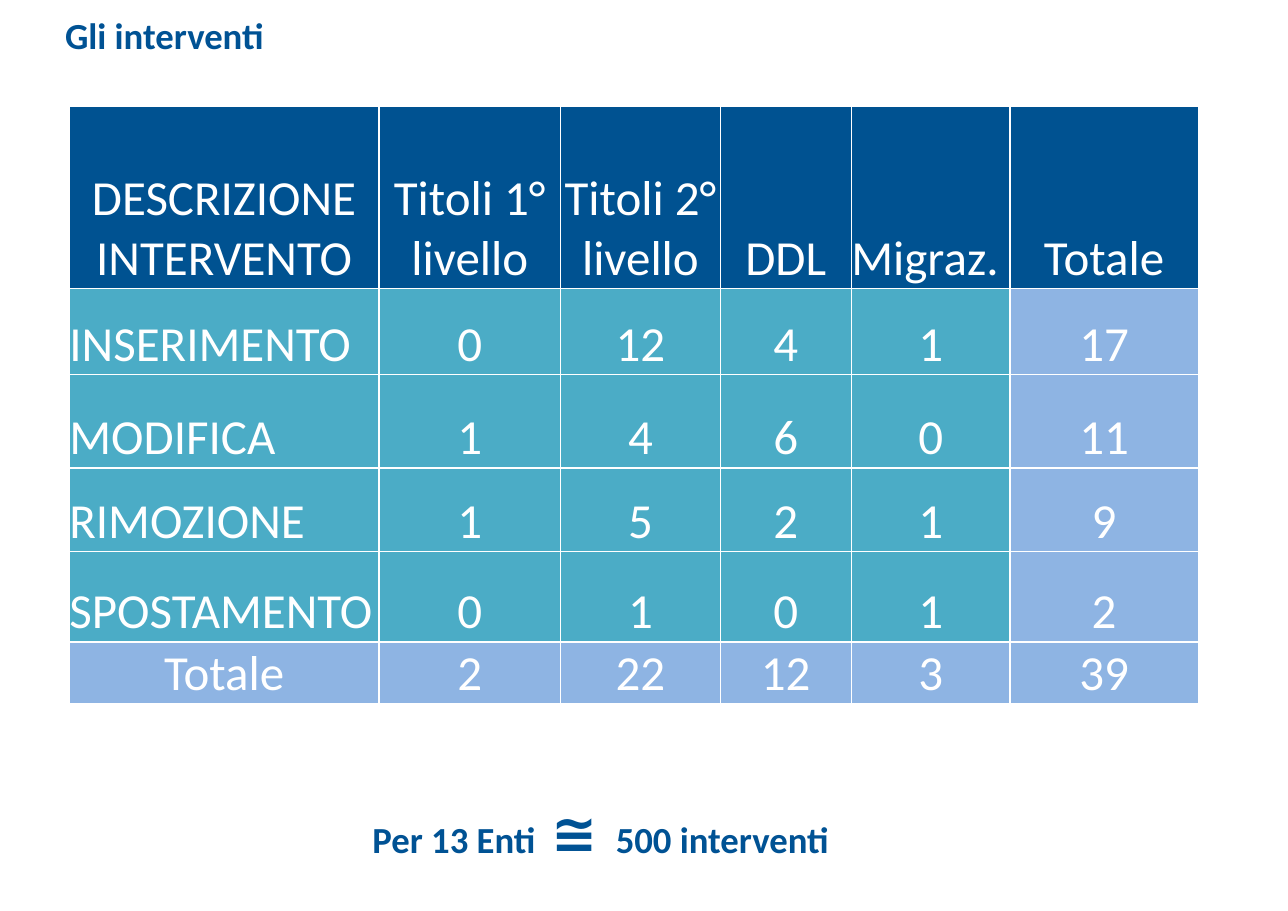
from lxml.etree import SubElement
from pptx import Presentation
from pptx.dml.color import RGBColor
from pptx.enum.text import MSO_ANCHOR, MSO_AUTO_SIZE, PP_ALIGN
from pptx.oxml.ns import qn
from pptx.util import Cm, Pt

BLUE = RGBColor(0x00, 0x52, 0x94)
HEADER = RGBColor(0x00, 0x52, 0x91)
TEAL = RGBColor(0x4B, 0xAC, 0xC6)
LIGHT = RGBColor(0x8E, 0xB4, 0xE3)
WHITE = RGBColor(0xFF, 0xFF, 0xFF)

ROWS = [
    ["DESCRIZIONE INTERVENTO", "Titoli 1° livello", "Titoli 2° livello", "DDL", "Migraz. ", "Totale"],
    ["INSERIMENTO", "0", "12", "4", "1", "17"],
    ["MODIFICA", "1", "4", "6", "0", "11"],
    ["RIMOZIONE", "1", "5", "2", "1", "9"],
    ["SPOSTAMENTO", "0", "1", "0", "1", "2"],
    ["Totale", "2", "22", "12", "3", "39"],
]
WIDTHS = [7.14, 4.19, 3.68, 3.02, 3.66, 4.34]
HEIGHTS = [4.19, 1.98, 2.16, 1.93, 2.08, 1.42]


def set_frame(tf):
    tf.word_wrap = True
    tf.auto_size = MSO_AUTO_SIZE.NONE
    tf.vertical_anchor = MSO_ANCHOR.TOP
    tf.margin_left, tf.margin_top = Cm(1.5), Cm(0.3)
    tf.margin_right, tf.margin_bottom = Cm(0.6), Cm(0.38)
    p = tf.paragraphs[0]
    p.alignment = PP_ALIGN.LEFT
    p.font.name = "Calibri"
    p.font.size = Pt(24)
    p.font.bold = True
    p.font.color.rgb = BLUE
    return p


def set_borders(cell):
    tcPr = cell._tc.get_or_add_tcPr()
    for side in ("a:lnL", "a:lnR", "a:lnT", "a:lnB"):
        ln = SubElement(tcPr, qn(side), w=str(Pt(1)))
        fill = SubElement(ln, qn("a:solidFill"))
        SubElement(fill, qn("a:srgbClr"), val=str(WHITE))


prs = Presentation()
prs.slide_width, prs.slide_height = Cm(29.7), Cm(21)
s = prs.slides.add_slide(prs.slide_layouts[5])

title = s.shapes.title
title.left, title.top, title.width, title.height = Cm(0), Cm(0), Cm(29.7), Cm(1.73)
title.text_frame.text = "Gli interventi"
set_frame(title.text_frame)

table = s.shapes.add_table(len(ROWS), len(WIDTHS), Cm(1.6), Cm(2.46),
                           Cm(sum(WIDTHS)), Cm(sum(HEIGHTS))).table
for column, width in zip(table.columns, WIDTHS):
    column.width = Cm(width)
for row, height in zip(table.rows, HEIGHTS):
    row.height = Cm(height)

last_row, last_col = len(ROWS) - 1, len(WIDTHS) - 1
for i, texts in enumerate(ROWS):
    for j, text in enumerate(texts):
        cell = table.cell(i, j)
        cell.text = text
        cell.margin_left = cell.margin_right = cell.margin_top = cell.margin_bottom = 0
        cell.vertical_anchor = MSO_ANCHOR.BOTTOM
        set_borders(cell)
        cell.fill.solid()
        if i == 0:
            cell.fill.fore_color.rgb = HEADER
        elif i == last_row or j == last_col:
            cell.fill.fore_color.rgb = LIGHT
        else:
            cell.fill.fore_color.rgb = TEAL
        p = cell.text_frame.paragraphs[0]
        p.alignment = PP_ALIGN.LEFT if j == 0 and 0 < i < last_row else PP_ALIGN.CENTER
        p.font.name = "Calibri"
        p.font.size = Pt(32)
        p.font.bold = False
        p.font.color.rgb = WHITE

summary = s.shapes.add_textbox(Cm(7.09), Cm(18.11), Cm(14.15), Cm(2.24))
p = set_frame(summary.text_frame)
for text, size in (("Per 13 Enti", 24), (" ≅ ", 36), ("500 interventi", 24)):
    r = p.add_run()
    r.text = text
    r.font.name = "Calibri"
    r.font.size = Pt(size)
    r.font.bold = True
    r.font.color.rgb = BLUE
    if size == 36:
        r._r.get_or_add_rPr().set("spc", "200")

prs.save("out.pptx")
